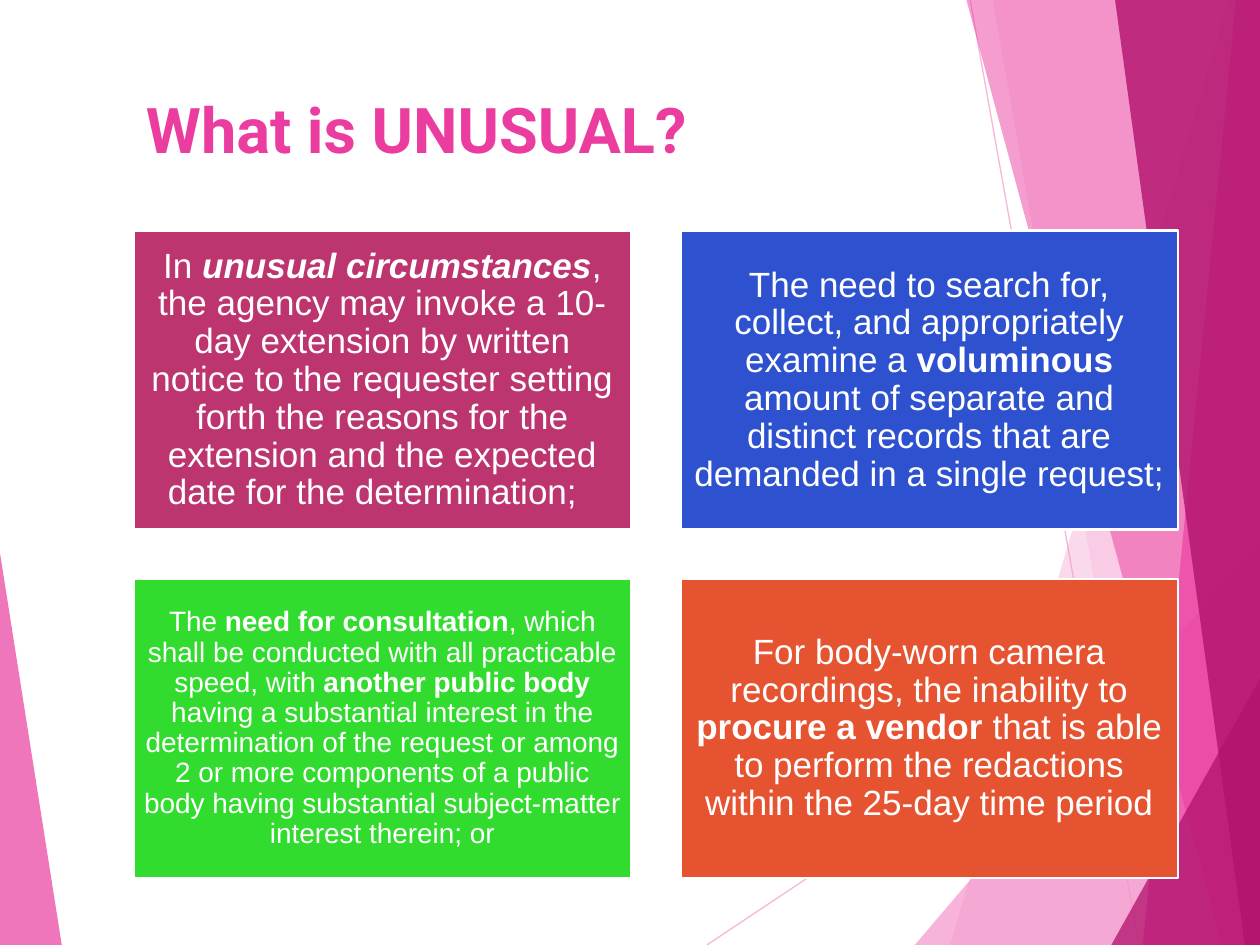
from lxml import etree
from pptx import Presentation
from pptx import util as u
from pptx.dml.color import RGBColor
from pptx.enum import shapes, text
from pptx.oxml import ns

COLORS = {
    "light_pink": "F496CB", "pink": "EB3D9F", "magenta": "B2136D",
    "white": "FFFFFF", "berry": "BC356F", "blue": "2E52CF",
    "green": "32DC2F", "orange": "E65331",
}

# Facets of the backdrop: colour, opacity in percent, corners in inches
FACETS = [
    ("light_pink", 36, [(9.75, 0), (7.54, 7.5), (10.02, 7.5), (10.01, 0)]),
    ("light_pink", 20, [(7.88, 0), (9.19, 7.5), (10.01, 7.5), (10.01, 0)]),
    ("light_pink", 72, [(7.26, 7.5), (10, 4.29), (10.01, 7.5)]),
    ("pink", 50, [(7.67, 0), (9.7, 7.5), (10.01, 7.5), (10.01, 0)]),
    ("pink", 66, [(9.81, 0), (9.07, 7.5), (10.01, 7.5), (10, 0)]),
    ("magenta", 80, [(8.85, 0), (9.88, 7.5), (10.02, 7.5), (10, 0)]),
    ("magenta", 76, [(8.82, 7.5), (10.02, 5.35), (10.02, 7.5)]),
    ("pink", 70, [(0, 4.39), (0.49, 7.5), (0, 7.5)]),
]
RAYS = [((5.61, 7.5), (10.01, 4.57)), ((7.7, 0), (9.04, 7.5))]

# Cards: fill, text size, inset, runs as (text, style)
CARDS = [
    ("berry", 20, 0.08, [
        ("In ", ""),
        ("unusual circumstances", "bi"),
        (", the agency may invoke a 10-day extension by written notice to the "
         "requester setting forth the reasons for the extension and the "
         "expected date for the determination;  ", "")]),
    ("blue", 20, 0.08, [
        ("The need to search for, collect, and appropriately examine a ", ""),
        ("voluminous", "b"),
        (" amount of separate and distinct records that are demanded in a "
         "single request;", "")]),
    ("green", 16, 0.07, [
        ("The ", ""),
        ("need for consultation", "b"),
        (", which shall be conducted with all practicable speed, with ", ""),
        ("another public body", "b"),
        (" having a substantial interest in the determination of the request "
         "or among 2 or more components of a public body having substantial "
         "subject-matter interest therein; or", "")]),
    ("orange", 20, 0.08, [
        ("For body-worn camera recordings, the inability to ", ""),
        ("procure a vendor ", "b"),
        ("that is able to perform the redactions within the 25-day time "
         "period", "")]),
]


def rgb(name):
    return RGBColor.from_string(COLORS[name])


def set_opacity(fill_owner, percent):
    color = fill_owner.find(".//" + ns.qn("a:srgbClr"))
    etree.SubElement(color, ns.qn("a:alpha"), val=str(percent * 1000))


def add_run(paragraph, words, font, size, color, style=""):
    run = paragraph.add_run()
    run.text = words
    run.font.name = font
    run.font.size = u.Pt(size)
    run.font.color.rgb = rgb(color)
    run.font.bold = "b" in style
    run.font.italic = "i" in style


def add_backdrop(slide, left, top):
    # Thin rays
    for start, end in RAYS:
        ray = slide.shapes.add_connector(
            shapes.MSO_CONNECTOR.STRAIGHT,
            u.Inches(left + start[0]), u.Inches(top + start[1]),
            u.Inches(left + end[0]), u.Inches(top + end[1]))
        ray.line.color.rgb = rgb("light_pink")
        ray.line.width = u.Pt(0.75)
        properties = ray._element.spPr
        set_opacity(properties, 70)
        etree.SubElement(properties, ns.qn("a:effectLst"))
    # Translucent facets
    for color, opacity, corners in FACETS:
        points = [(u.Inches(left + x), u.Inches(top + y)) for x, y in corners]
        outline = slide.shapes.build_freeform(*points[0])
        outline.add_line_segments(points[1:], close=True)
        facet = outline.convert_to_shape()
        facet.fill.solid()
        facet.fill.fore_color.rgb = rgb(color)
        set_opacity(facet._element.spPr, opacity)
        facet.line.fill.background()
        facet.shadow.inherit = False


def add_title(slide, left, top, width, height):
    title = slide.shapes.add_textbox(
        u.Inches(left), u.Inches(top), u.Inches(width), u.Inches(height))
    frame = title.text_frame
    frame.word_wrap = True
    frame.vertical_anchor = text.MSO_ANCHOR.TOP
    add_run(frame.paragraphs[0], "What is UNUSUAL?", "Roboto", 36, "pink", "b")


def add_card(slide, left, top, width, height, color, size, inset, runs):
    card = slide.shapes.add_shape(
        shapes.MSO_SHAPE.RECTANGLE,
        u.Inches(left), u.Inches(top), u.Inches(width), u.Inches(height))
    card.fill.solid()
    card.fill.fore_color.rgb = rgb(color)
    card.line.color.rgb = rgb("white")
    card.line.width = u.Pt(1.5)
    card.shadow.inherit = False
    frame = card.text_frame
    frame.word_wrap = True
    frame.vertical_anchor = text.MSO_ANCHOR.MIDDLE
    frame.margin_left = frame.margin_right = u.Inches(inset)
    frame.margin_top = frame.margin_bottom = u.Inches(inset)
    paragraph = frame.paragraphs[0]
    paragraph.alignment = text.PP_ALIGN.CENTER
    paragraph.line_spacing = 0.9
    for words, style in runs:
        add_run(paragraph, words, "Arial", size, "white", style)


def add_card_grid(slide, left, top, width, height, gap=0.39, columns=2):
    rows = len(CARDS) // columns
    card_width = (width - gap * (columns - 1)) / columns
    card_height = (height - gap * (rows - 1)) / rows
    for index, card in enumerate(CARDS):
        row, column = divmod(index, columns)
        add_card(slide, left + column * (card_width + gap),
                 top + row * (card_height + gap),
                 card_width, card_height, *card)


def main():
    deck = Presentation()
    deck.slide_width, deck.slide_height = u.Inches(10), u.Inches(7.5)
    slide = deck.slides.add_slide(deck.slide_layouts[6])
    add_backdrop(slide, 0, 0)
    add_title(slide, 1.06, 0.67, 8.36, 1.2)
    add_card_grid(slide, 1.06, 1.83, 8.29, 5.14)
    deck.save("out.pptx")


if __name__ == "__main__":
    main()
